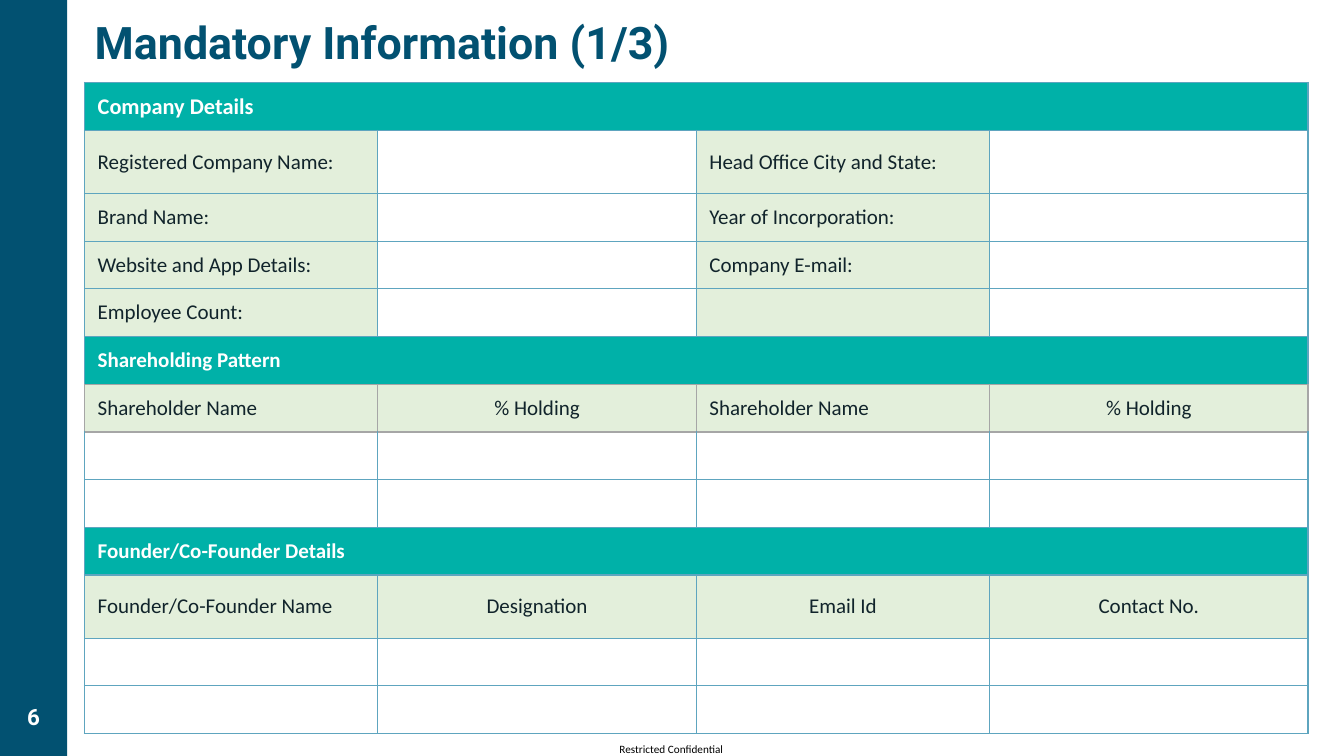
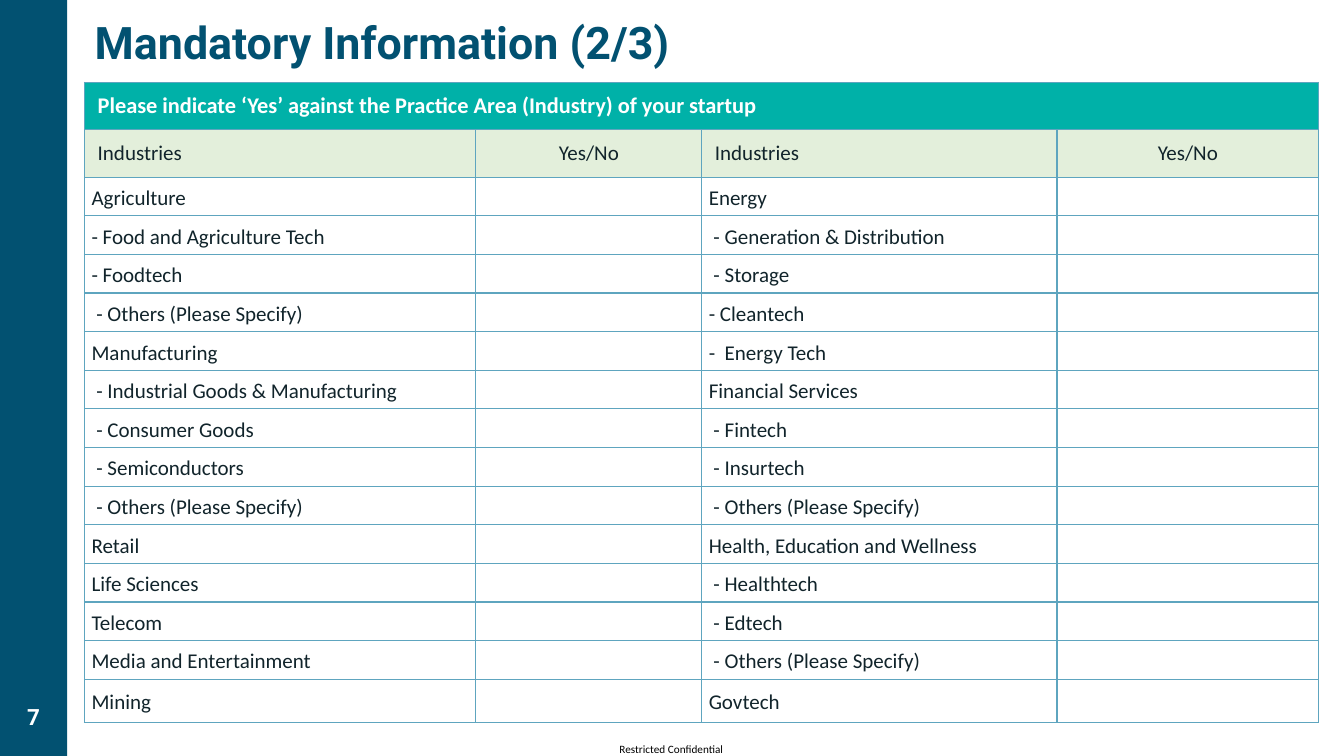
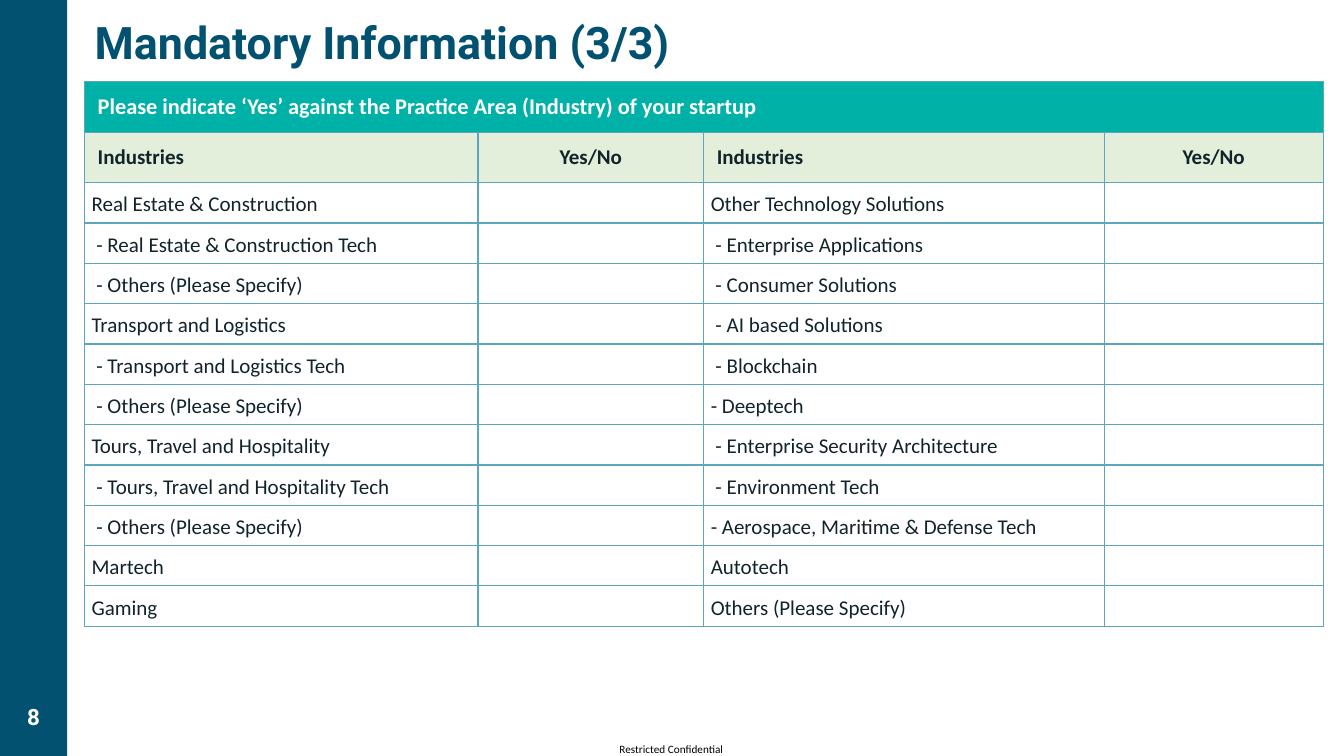
from dataclasses import dataclass

from lxml.etree import SubElement
from pptx import Presentation
from pptx.dml.color import RGBColor
from pptx.enum.shapes import MSO_SHAPE
from pptx.enum.text import MSO_ANCHOR, PP_ALIGN
from pptx.oxml.ns import qn
from pptx.util import Pt


@dataclass(frozen=True)
class Theme:
    navy: str = "025171"
    teal: str = "00B1A8"
    tint: str = "E3EFDB"
    white: str = "FFFFFF"
    black: str = "000000"
    ink: str = "11242B"
    rule: str = "5EA5BF"
    grey_rule: str = "A6A6A6"
    title_font: str = "Roboto"
    body_font: str = "Calibri"
    title_size: float = 32
    band_size: float = 16
    cell_size: float = 15
    footer_size: float = 8


T = Theme()


def write(tf, text, size=T.cell_size, color=T.ink, font=T.body_font, bold=False,
          align=PP_ALIGN.LEFT, spacing=None, anchor=MSO_ANCHOR.TOP,
          margins=(7.2, 3.6), wrap=True):
    """Fill a text frame with one formatted paragraph; margins are (sides, top and bottom)."""
    tf.word_wrap = wrap
    tf.vertical_anchor = anchor
    tf.margin_left = tf.margin_right = Pt(margins[0])
    tf.margin_top = tf.margin_bottom = Pt(margins[1])
    p = tf.paragraphs[0]
    p.alignment = align
    if spacing:
        p.line_spacing = spacing
    r = p.add_run()
    r.text = text
    r.font.name, r.font.size, r.font.bold = font, Pt(size), bold
    r.font.color.rgb = RGBColor.from_string(color)


def set_borders(cell, colors):
    """Draw 1 pt borders; colors maps the sides L, R, T, B to a colour."""
    tcPr = cell._tc.get_or_add_tcPr()
    for side in "LRTB":
        ln = SubElement(tcPr, qn(f"a:ln{side}"), w="12700")
        SubElement(SubElement(ln, qn("a:solidFill")), qn("a:srgbClr"), val=colors[side])


# Row kinds: (fill of columns 1 and 3, fill of columns 2 and 4, text format)
ROW_KINDS = {
    "band": (T.teal, T.teal, dict(color=T.white, bold=True, margins=(9.4, 5))),
    "head": (T.tint, T.tint, dict(margins=(9.4, 5))),
    "bold head": (T.tint, T.tint, dict(bold=True, margins=(9.4, 5))),
    "form": (T.tint, T.white, dict(margins=(9.4, 5))),
    "list": (T.white, T.white, dict(spacing=1.15, margins=(5, 0))),
}
ROW_KINDS["grey head"] = ROW_KINDS["head"]
CENTRED = {"% Holding", "Designation", "Email Id", "Contact No.", "Yes/No"}

# Slide contents: each row is (kind, height, texts)
ROW, TALL = 34.1, 45.1
BLANK = ("list", ROW, [""] * 4)
company_rows = [
    ("band", ROW, ["Company Details"]),
    ("form", TALL, ["Registered Company Name:", "", "Head Office City and State:", ""]),
    ("form", ROW, ["Brand Name:", "", "Year of Incorporation:", ""]),
    ("form", ROW, ["Website and App Details:", "", "Company E-mail:", ""]),
    ("form", ROW, ["Employee Count:", "", "", ""]),
    ("band", ROW, ["Shareholding Pattern"]),
    ("grey head", ROW, ["Shareholder Name", "% Holding"] * 2),
    BLANK,
    BLANK,
    ("band", ROW, ["Founder/Co-Founder Details"]),
    ("head", TALL, ["Founder/Co-Founder Name", "Designation", "Email Id", "Contact No."]),
    BLANK,
    BLANK,
]

PROMPT = ["Please indicate ‘Yes’ against the Practice Area (Industry) of your startup"]
INDUSTRY_HEAD = ["Industries", "Yes/No"] * 2
industries_a = [
    ("Agriculture", "Energy"),
    ("- Food and Agriculture Tech", " - Generation & Distribution"),
    ("- Foodtech", " - Storage"),
    (" - Others (Please Specify)", "- Cleantech"),
    ("Manufacturing", "-  Energy Tech"),
    (" - Industrial Goods & Manufacturing", "Financial Services"),
    (" - Consumer Goods", " - Fintech"),
    (" - Semiconductors", " - Insurtech"),
    (" - Others (Please Specify)", " - Others (Please Specify)"),
    ("Retail", "Health, Education and Wellness"),
    ("Life Sciences", " - Healthtech"),
    ("Telecom", " - Edtech"),
    ("Media and Entertainment", " - Others (Please Specify)"),
    ("Mining", "Govtech"),
]
industries_b = [
    ("Real Estate & Construction", "Other Technology Solutions"),
    (" - Real Estate & Construction Tech", " - Enterprise Applications"),
    (" - Others (Please Specify)", " - Consumer Solutions"),
    ("Transport and Logistics", " - AI based Solutions"),
    (" - Transport and Logistics Tech", " - Blockchain"),
    (" - Others (Please Specify)", "- Deeptech"),
    ("Tours, Travel and Hospitality", " - Enterprise Security Architecture"),
    (" - Tours, Travel and Hospitality Tech", " - Environment Tech"),
    (" - Others (Please Specify)", "- Aerospace, Maritime & Defense Tech"),
    ("Martech", "Autotech"),
    ("Gaming", "Others (Please Specify)"),
]
rows_a = [("band", 33.8, PROMPT), ("head", 33.8, INDUSTRY_HEAD)]
rows_a += [("list", 30.8 if left == "Mining" else 27.6, [left, "", right, ""])
           for left, right in industries_a]
rows_b = [("band", 36.1, PROMPT), ("bold head", 36.1, INDUSTRY_HEAD)]
rows_b += [("list", 28.8, [left, "", right, ""]) for left, right in industries_b]

# Slides: (table top, column widths, rows)
slides = [
    (59, [209.5, 227.5] * 2, company_rows),
    (59, [279.5, 161.4, 253.7, 187], rows_a),
    (58.3, [281, 161.3, 286, 156.5], rows_b),
]
FIRST_NUMBER = 6
TABLE_LEFT = 60.4

prs = Presentation()
prs.slide_width, prs.slide_height = Pt(960), Pt(540)

for i, (top, widths, rows) in enumerate(slides):
    s = prs.slides.add_slide(prs.slide_layouts[5])

    # Side band, page number and footer
    sp = s.shapes.add_shape(MSO_SHAPE.RECTANGLE, 0, 0, Pt(48), Pt(540))
    sp.shadow.inherit = False
    sp.fill.solid()
    sp.fill.fore_color.rgb = RGBColor.from_string(T.navy)
    sp.line.fill.background()
    number = s.shapes.add_textbox(0, Pt(499), Pt(48), Pt(26.6))
    write(number.text_frame, str(FIRST_NUMBER + i), size=T.band_size, color=T.white,
          font=T.title_font, bold=True, align=PP_ALIGN.CENTER)
    footer = s.shapes.add_textbox(Pt(442.5), Pt(530.4), Pt(76), Pt(9.6))
    write(footer.text_frame, "Restricted Confidential", size=T.footer_size,
          color=T.black, margins=(0, 0), wrap=False)

    # Title
    title = s.shapes.title
    title.left, title.top, title.width, title.height = Pt(60.4), Pt(7.2), Pt(828), Pt(60)
    write(title.text_frame, f"Mandatory Information ({i + 1}/{len(slides)})",
          size=T.title_size, color=T.navy, font=T.title_font, bold=True)

    # Table
    heights = [height for _, height, _ in rows]
    table = s.shapes.add_table(len(rows), len(widths), Pt(TABLE_LEFT), Pt(top),
                               Pt(sum(widths)), Pt(sum(heights))).table
    table.first_row = table.horz_banding = False
    for column, width in zip(table.columns, widths):
        column.width = Pt(width)
    kinds = [kind for kind, _, _ in rows]
    for y, (kind, height, texts) in enumerate(rows):
        table.rows[y].height = Pt(height)
        odd_fill, even_fill, style = ROW_KINDS[kind]
        # A grey header row also greys the edges it shares with its neighbours
        grey = kind == "grey head"
        side = T.grey_rule if grey else T.rule
        above = T.grey_rule if grey or "grey head" in kinds[max(y - 1, 0):y] else T.rule
        below = T.grey_rule if grey or "grey head" in kinds[y + 1:y + 2] else T.rule
        for x in range(len(widths)):
            cell = table.cell(y, x)
            set_borders(cell, {"L": side, "R": side, "T": above, "B": below})
            cell.fill.solid()
            cell.fill.fore_color.rgb = RGBColor.from_string(even_fill if x % 2 else odd_fill)
            cell.vertical_anchor = MSO_ANCHOR.MIDDLE
            sides, ends = style["margins"]
            cell.margin_left = cell.margin_right = Pt(sides)
            cell.margin_top = cell.margin_bottom = Pt(ends)
        if kind == "band":
            table.cell(y, 0).merge(table.cell(y, len(widths) - 1))
        for x, text in enumerate(texts):
            if text:
                align = PP_ALIGN.CENTER if text in CENTRED else PP_ALIGN.LEFT
                size = T.band_size if y == 0 else T.cell_size
                # The cell holds the margins, so its text frame takes none
                write(table.cell(y, x).text_frame, text, size=size, align=align,
                      **{**style, "margins": (0, 0)})

prs.save("out.pptx")
